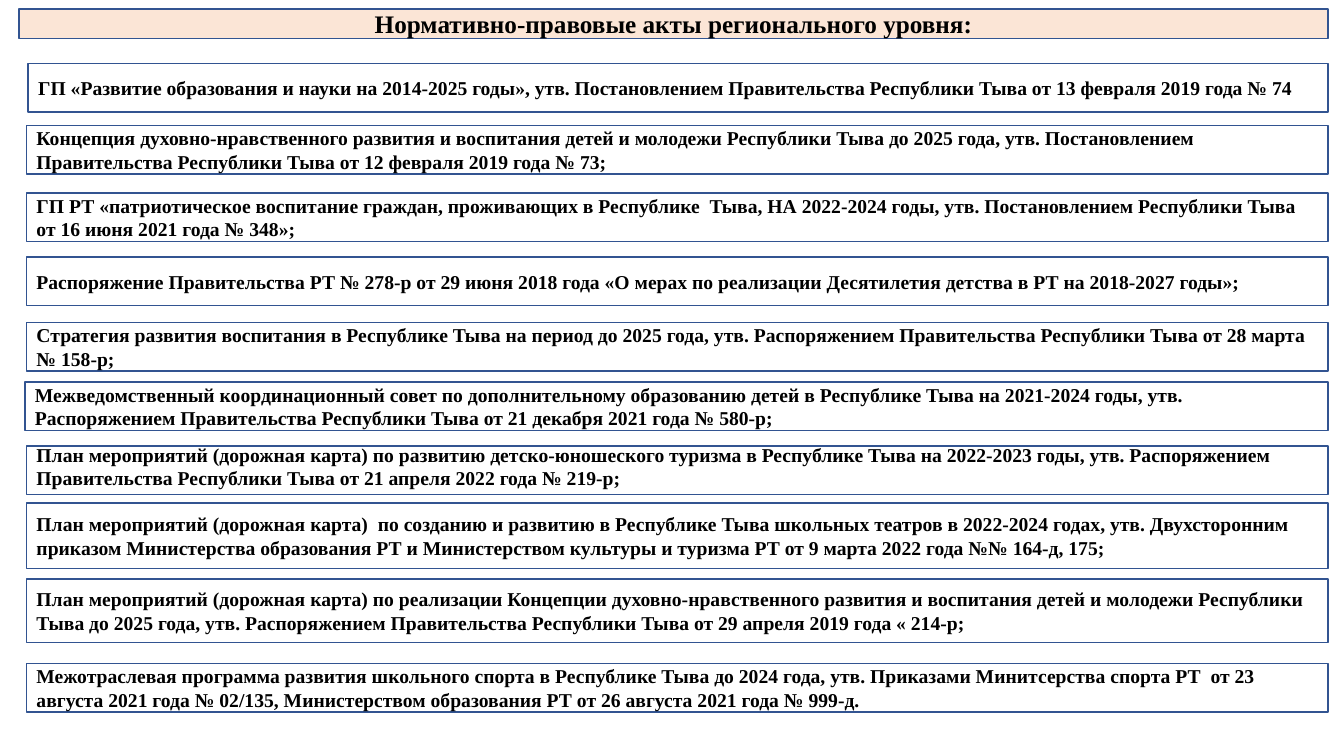
"""Build a slide that lists the regional legal acts in framed rows."""
from dataclasses import dataclass

from pptx import Presentation
from pptx.dml.color import RGBColor
from pptx.enum.shapes import MSO_SHAPE
from pptx.enum.text import MSO_ANCHOR, PP_ALIGN
from pptx.slide import Slide
from pptx.util import Cm, Pt

RECT = MSO_SHAPE.RECTANGLE
MIDDLE = MSO_ANCHOR.MIDDLE
LEFT, CENTER = PP_ALIGN.LEFT, PP_ALIGN.CENTER
RIGHT_EDGE = 33.47
BLANK = 6


@dataclass(frozen=True)
class Theme:
    """Colours, font and type sizes of the slide."""
    peach: RGBColor = RGBColor(0xFB, 0xE5, 0xD6)
    white: RGBColor = RGBColor(0xFF, 0xFF, 0xFF)
    blue: RGBColor = RGBColor(0x32, 0x54, 0x91)
    black: RGBColor = RGBColor(0, 0, 0)
    font: str = "Times New Roman"
    title: int = 18
    body: int = 14
    line: int = 1


THEME = Theme()


@dataclass(frozen=True)
class Box:
    """A framed row that ends at the right edge, in centimetres."""
    top: float
    text: str
    left: float = 0.67
    height: float = 1.22
    foot: float = 0.13
    fill: RGBColor = THEME.white
    size: int = THEME.body
    align: PP_ALIGN = LEFT


TITLE = Box(0.23, "Нормативно-правовые акты регионального уровня:", left=0.48,
            height=0.74, fill=THEME.peach, size=THEME.title, align=CENTER)

ACTS = [
    Box(1.6, "ГП «Развитие образования и науки на 2014-2025 годы», утв. "
        "Постановлением Правительства Республики Тыва от 13 февраля 2019 года № 74",
        left=0.71),
    Box(3.17, "Концепция духовно-нравственного развития и воспитания детей и молодежи "
        "Республики Тыва до 2025 года, утв. Постановлением Правительства "
        "Республики Тыва от 12 февраля 2019 года № 73;"),
    Box(4.86, "ГП РТ «патриотическое воспитание граждан, проживающих в Республике  Тыва, "
        "НА 2022-2024 годы, утв. Постановлением Республики Тыва "
        "от 16 июня 2021 года № 348»;"),
    Box(6.48, "Распоряжение Правительства РТ № 278-р от 29 июня 2018 года "
        "«О мерах по реализации Десятилетия детства в РТ на 2018-2027 годы»;"),
    Box(8.13, "Стратегия развития воспитания в Республике Тыва на период до 2025 года, "
        "утв. Распоряжением Правительства Республики Тыва от 28 марта № 158-р;"),
    Box(9.63, "Межведомственный координационный совет по дополнительному образованию "
        "детей в Республике Тыва на 2021-2024 годы, утв. Распоряжением "
        "Правительства Республики Тыва от 21 декабря 2021 года № 580-р;",
        left=0.63),
    Box(11.24, "План мероприятий (дорожная карта) по развитию детско-юношеского туризма "
        "в Республике Тыва на 2022-2023 годы, утв. Распоряжением "
        "Правительства Республики Тыва от 21 апреля 2022 года № 219-р;",
        foot=0.33),
    Box(12.68, "План мероприятий (дорожная карта)  по созданию и развитию в Республике "
        "Тыва школьных театров в 2022-2024 годах, утв. Двухсторонним приказом "
        "Министерства образования РТ и Министерством культуры и туризма РТ "
        "от 9 марта 2022 года №№ 164-д, 175;", height=1.65),
    Box(14.59, "План мероприятий (дорожная карта) по реализации Концепции "
        "духовно-нравственного развития и воспитания детей и молодежи Республики "
        "Тыва до 2025 года, утв. Распоряжением Правительства Республики Тыва "
        "от 29 апреля 2019 года « 214-р;", height=1.6),
    Box(16.72, "Межотраслевая программа развития школьного спорта в Республике Тыва "
        "до 2024 года, утв. Приказами Минитсерства спорта РТ  от 23 августа 2021 "
        "года № 02/135, Министерством образования РТ от 26 августа 2021 года № 999-д."),
]


def draw_box(slide: Slide, box: Box) -> None:
    """Draw one framed row with its text."""
    shape = slide.shapes.add_shape(RECT, Cm(box.left), Cm(box.top),
                                   Cm(RIGHT_EDGE - box.left), Cm(box.height))
    shape.shadow.inherit = False
    shape.fill.solid()
    shape.fill.fore_color.rgb = box.fill
    shape.line.color.rgb = THEME.blue
    shape.line.width = Pt(THEME.line)
    frame = shape.text_frame
    frame.word_wrap = True
    frame.vertical_anchor = MIDDLE
    frame.margin_bottom = Cm(box.foot)
    para = frame.paragraphs[0]
    para.alignment = box.align
    run = para.add_run()
    run.text = box.text
    run.font.name = THEME.font
    run.font.size = Pt(box.size)
    run.font.bold = True
    run.font.color.rgb = THEME.black


def main() -> None:
    """Build and save the slide."""
    deck = Presentation()
    deck.slide_width, deck.slide_height = Cm(33.87), Cm(19.05)
    slide = deck.slides.add_slide(deck.slide_layouts[BLANK])
    for box in [TITLE, *ACTS]:
        draw_box(slide, box)
    deck.save("out.pptx")


if __name__ == "__main__":
    main()
